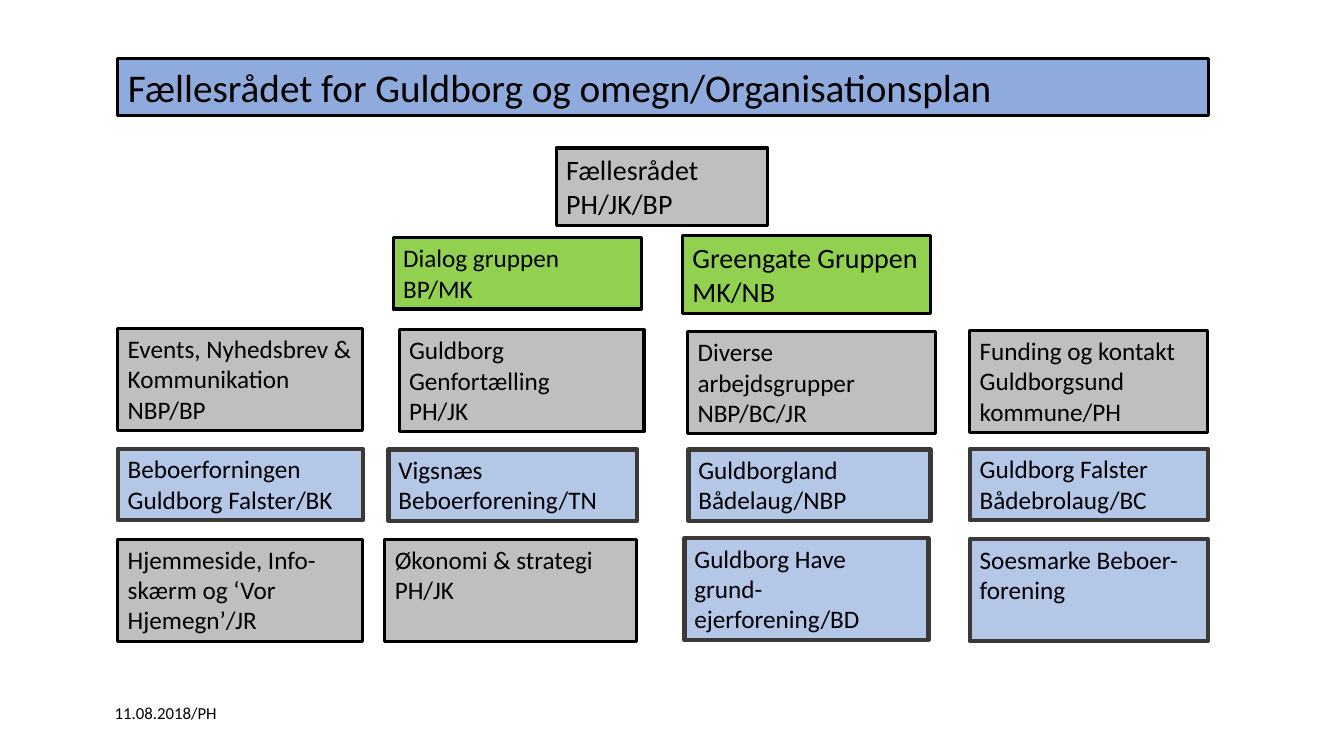
from collections import namedtuple

from pptx import Presentation
from pptx.dml.color import RGBColor
from pptx.enum.shapes import MSO_SHAPE as Shape
from pptx.enum.text import MSO_ANCHOR as Anchor, MSO_AUTO_SIZE as AutoSize, PP_ALIGN as Align
from pptx.util import Cm, Pt

BLACK = RGBColor(0x00, 0x00, 0x00)
CHARCOAL = RGBColor(0x3B, 0x38, 0x38)
GREY = RGBColor(0xBF, 0xBF, 0xBF)
GREEN = RGBColor(0x92, 0xD0, 0x50)
BLUE = RGBColor(0x8F, 0xAA, 0xDC)
PALE_BLUE = RGBColor(0xB4, 0xC7, 0xE7)

Box = namedtuple("Box", "left top width height")
Unit = namedtuple("Unit", "dx dy width text fill")

TITLE_BOX = Box(2.97, 1.47, 27.48, 1.45)
COUNCIL_BOX = Box(14.02, 3.73, 5.33, 1.96)
GROUPS_BOX = Box(9.83, 5.94, 13.62, 1.8)
FOOTER_BOX = Box(2.64, 17.58, 3.12, 0.76)

UNIT_ROWS = [
    (Box(2.97, 8.28, 27.48, 2.57), [
        Unit(0, 0, 6.17, "Events, Nyhedsbrev & Kommunikation\nNBP/BP", GREY),
        Unit(7.09, 0.03, 6.17, "Guldborg Genfortælling\nPH/JK", GREY),
        Unit(14.36, 0.08, 6.25, "Diverse arbejdsgrupper\nNBP/BC/JR", GREY),
        Unit(21.47, 0.05, 6, "Funding og kontakt Guldborgsund kommune/PH", GREY),
    ]),
    (Box(2.97, 11.31, 27.48, 1.8), [
        Unit(0, 0, 6.17, "Beboerforningen Guldborg Falster/BK", PALE_BLUE),
        Unit(6.82, 0.02, 6.27, "Vigsnæs Beboerforening/TN", PALE_BLUE),
        Unit(14.38, 0.02, 6.1, "Guldborgland Bådelaug/NBP", PALE_BLUE),
        Unit(21.47, 0, 6, "Guldborg Falster Bådebrolaug/BC", PALE_BLUE),
    ]),
    (Box(2.97, 13.59, 27.48, 2.57), [
        Unit(0, 0, 6.17, "Hjemmeside, Info-\nskærm og ‘Vor Hjemegn’/JR", GREY),
        Unit(6.73, 0, 6.35, "Økonomi & strategi\nPH/JK", GREY),
        Unit(14.28, -0.03, 6.15, "Guldborg Have grund- ejerforening/BD", PALE_BLUE),
        Unit(21.47, 0, 6, "Soesmarke Beboer-forening", PALE_BLUE),
    ]),
]


def write_text(frame, text, size=18, wrap=True):
    frame.word_wrap = wrap
    frame.auto_size = AutoSize.NONE
    frame.vertical_anchor = Anchor.TOP
    frame.text = text
    for para in frame.paragraphs:
        para.alignment = Align.LEFT
        para.font.name = "Calibri"
        para.font.size = Pt(size)
        para.font.color.rgb = BLACK


def paint(shape, fill, line=BLACK, weight=2.25):
    shape.fill.solid()
    shape.fill.fore_color.rgb = fill
    shape.line.color.rgb = line
    shape.line.width = Pt(weight)


def add_unit(page, box, text, fill, **text_format):
    shape = page.shapes.add_shape(Shape.RECTANGLE, *map(Cm, box))
    shape.shadow.inherit = False
    if fill == PALE_BLUE:
        paint(shape, fill, CHARCOAL, 3)
    else:
        paint(shape, fill)
    write_text(shape.text_frame, text, **text_format)


def add_title(page, box):
    title = page.shapes.title
    title.left, title.top, title.width, title.height = map(Cm, box)
    paint(title, BLUE)
    write_text(title.text_frame, "Fællesrådet for Guldborg og omegn/Organisationsplan", size=28)


def add_groups(page, box):
    width = 6.25
    add_unit(page, Box(box.left + 0.08, box.top + 0.05, width, box.height),
             "Dialog gruppen\nBP/MK", GREEN)
    add_unit(page, Box(box.left + box.width - width, box.top, width, box.height + 0.16),
             "Greengate Gruppen\nMK/NB", GREEN, size=20, wrap=False)


def add_unit_row(page, box, units):
    for unit in units:
        place = Box(box.left + unit.dx, box.top + unit.dy, unit.width, box.height)
        add_unit(page, place, unit.text, unit.fill)


def add_footer(page, box):
    footer = page.shapes.add_textbox(*map(Cm, box))
    write_text(footer.text_frame, "11.08.2018/PH", size=12, wrap=False)


def main():
    deck = Presentation()
    deck.slide_width, deck.slide_height = Cm(33.87), Cm(19.05)
    page = deck.slides.add_slide(deck.slide_layouts[5])
    add_title(page, TITLE_BOX)
    add_unit(page, COUNCIL_BOX, "Fællesrådet\nPH/JK/BP", GREY, size=20)
    add_groups(page, GROUPS_BOX)
    for box, units in UNIT_ROWS:
        add_unit_row(page, box, units)
    add_footer(page, FOOTER_BOX)
    deck.save("out.pptx")


if __name__ == "__main__":
    main()
